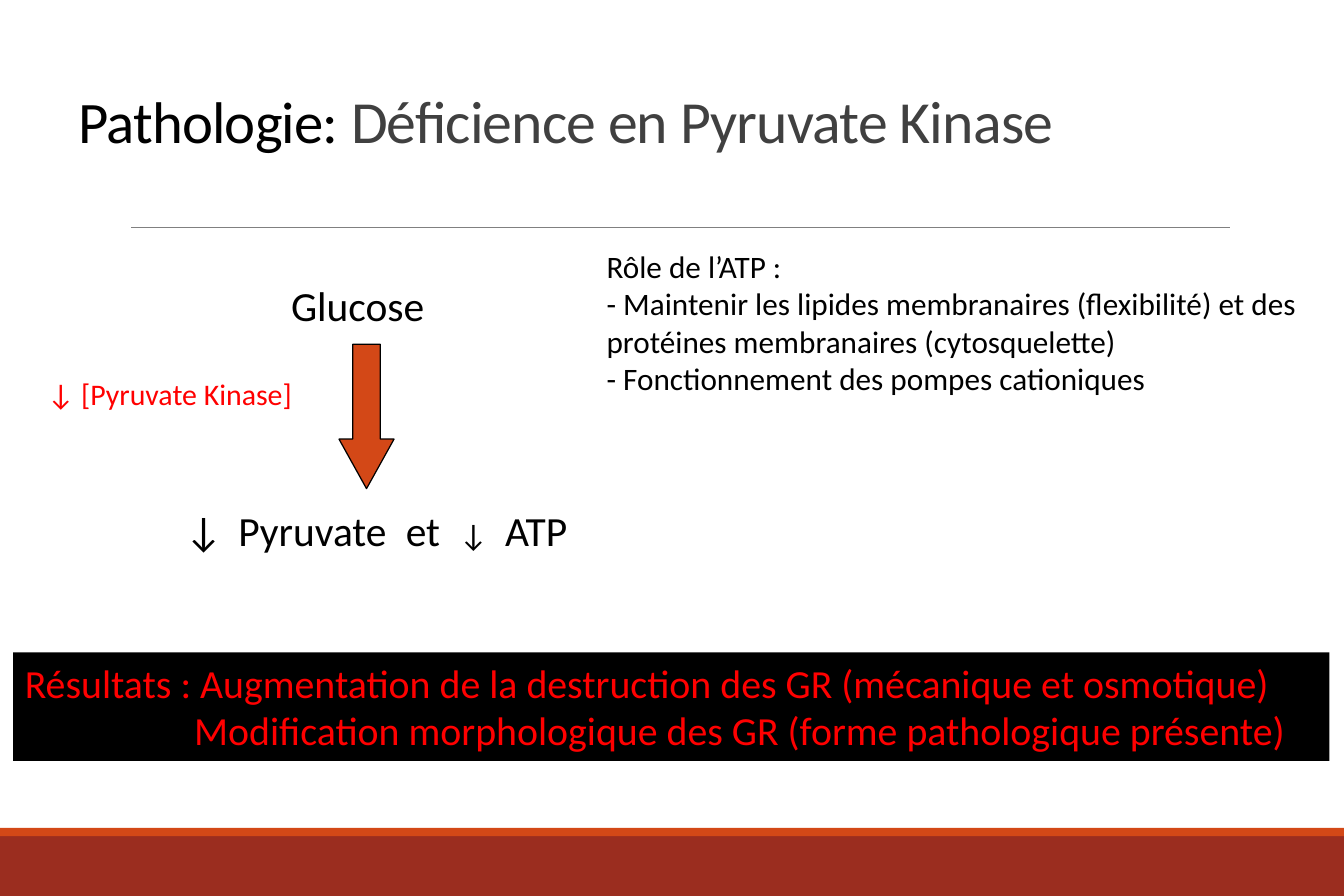
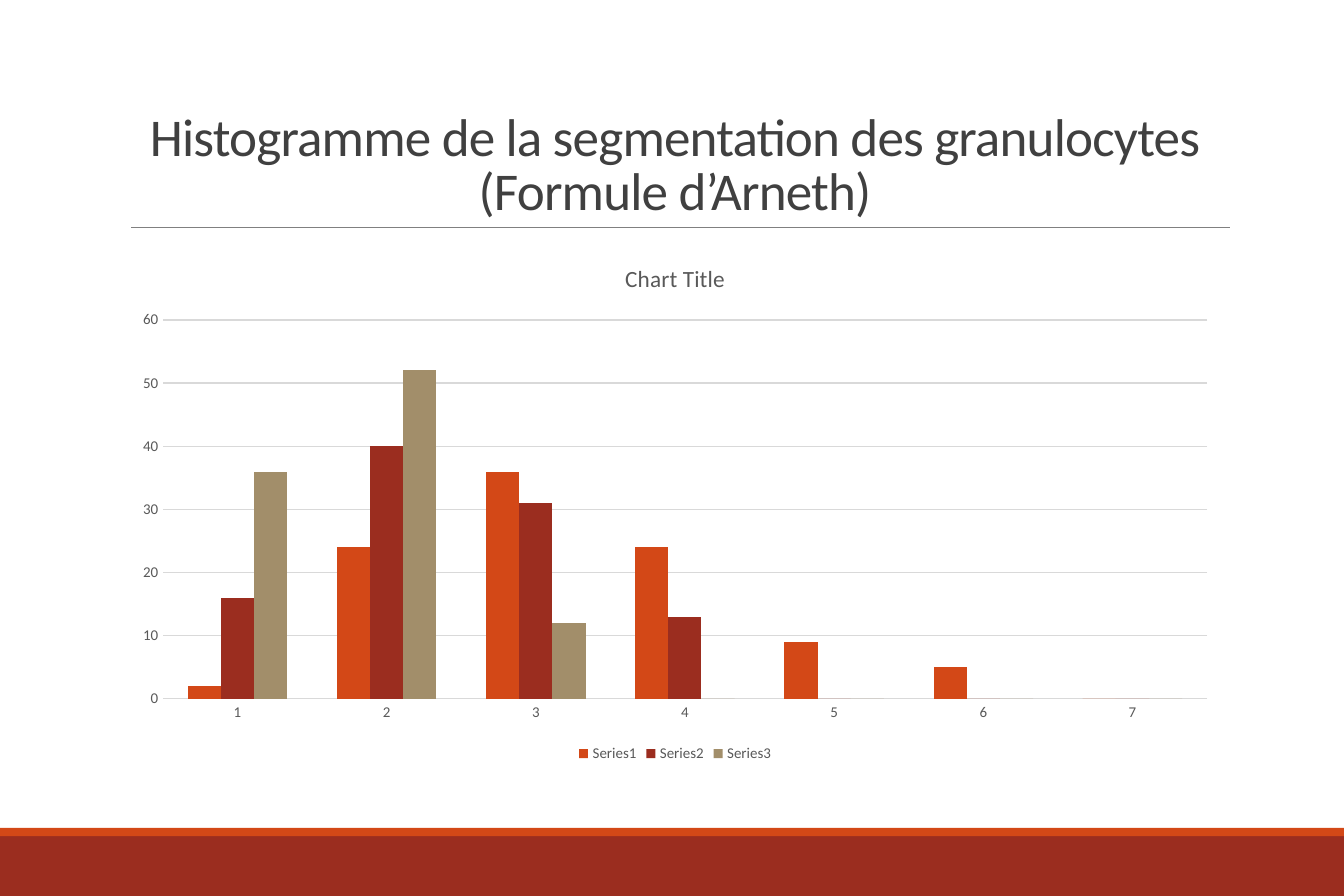
from dataclasses import dataclass
from typing import Any

import pptx
import pptx.chart.data
import pptx.dml.color
import pptx.enum.chart
import pptx.enum.shapes
import pptx.enum.text
import pptx.oxml.ns
import pptx.util
from lxml import etree

Cm = pptx.util.Cm
Pt = pptx.util.Pt
Shapes = pptx.enum.shapes.MSO_SHAPE
Align = pptx.enum.text.PP_ALIGN
Anchor = pptx.enum.text.MSO_ANCHOR

FONT = "Calibri"
ORANGE, BRICK, SAND = "D34817", "9B2D1F", "A28E6A"
BLACK, RED, GREY = "000000", "FF0000", "808080"
TITLE_COLOUR, CHART_COLOUR, GRID_COLOUR = "404040", "595959", "D9D9D9"
SLIDE_WIDTH, SLIDE_HEIGHT = 28.58, 19.05


@dataclass(frozen=True)
class Box:
    """Position and size in centimetres."""
    left: float
    top: float
    width: float
    height: float

    def lengths(self) -> tuple[Any, ...]:
        return tuple(Cm(value) for value in (self.left, self.top, self.width, self.height))


@dataclass(frozen=True)
class Run:
    text: str
    size: float
    colour: str = BLACK
    spacing: float = 0


@dataclass(frozen=True)
class Paragraph:
    runs: tuple[Run, ...]
    align: Any = Align.LEFT
    line_spacing: float = 1.0
    indent: float = 0
    tabs: tuple[float, ...] = ()


@dataclass(frozen=True)
class Label:
    box: Box
    paragraphs: tuple[Paragraph, ...]


@dataclass(frozen=True)
class Series:
    name: str
    values: tuple[int, ...]
    colour: str


BANDS = (
    (Box(0, 17.78, SLIDE_WIDTH, 1.27), BRICK),
    (Box(0, 17.6, SLIDE_WIDTH, 0.18), ORANGE),
)
PATHWAY_LABELS = (
    Label(Box(5.94, 5.84, 4, 1.35), (Paragraph((Run("Glucose", 25),)),)),
    Label(Box(0.76, 7.87, 6.45, 1.04), (Paragraph((Run("↓ [Pyruvate Kinase]", 18, RED),)),)),
    Label(Box(12.65, 5.13, 15.44, 4.27), tuple(
        Paragraph((Run(text, 18.8),)) for text in (
            "Rôle de l’ATP :",
            "- Maintenir les lipides membranaires (flexibilité) et des "
            "protéines membranaires (cytosquelette)",
            "- Fonctionnement des pompes cationiques",
        ))),
    Label(Box(3.68, 10.62, 8.64, 1.35), (Paragraph(
        (Run("↓\tPyruvate\tet\t", 25), Run("↓\t", 18.8), Run("ATP", 25)),
        tabs=(1.14, 4.7, 5.84, 6.81)),)),
)
RESULTS = (
    Paragraph((Run("Résultats : Augmentation de la destruction des GR "
                   "(mécanique et osmotique)", 24, RED),)),
    Paragraph((Run("Modification morphologique des GR (forme pathologique présente)",
                   24, RED),), indent=3.6),
)
CATEGORIES = tuple(str(number) for number in range(1, 8))
SERIES = (
    Series("Series1", (2, 24, 36, 24, 9, 5, 0), ORANGE),
    Series("Series2", (16, 40, 31, 13, 0, 0, 0), BRICK),
    Series("Series3", (36, 52, 12, 0, 0, 0, 0), SAND),
)


def colour_of(value: str) -> Any:
    return pptx.dml.color.RGBColor.from_string(value)


def apply_format(target: Any, values: dict[str, Any]) -> None:
    for name, value in values.items():
        setattr(target, name, value)


def fill_solid(fill: Any, colour: str) -> None:
    fill.solid()
    fill.fore_color.rgb = colour_of(colour)


def format_font(font: Any, size: float, colour: str) -> None:
    apply_format(font, {"name": FONT, "size": Pt(size), "bold": False})
    font.color.rgb = colour_of(colour)


def add_run(paragraph: Any, run: Run) -> None:
    """Add the run, turning each newline into a line break."""
    for index, text in enumerate(run.text.split("\n")):
        if index:
            paragraph.add_line_break()
        part = paragraph.add_run()
        part.text = text
        format_font(part.font, run.size, run.colour)
        if run.spacing:
            part.font._element.set("spc", str(round(run.spacing * 100)))


def write_text(shape: Any, paragraphs: tuple[Paragraph, ...], anchor: Any = Anchor.TOP) -> None:
    frame = shape.text_frame
    apply_format(frame, {"word_wrap": True, "vertical_anchor": anchor})
    for index, content in enumerate(paragraphs):
        paragraph = frame.add_paragraph() if index else frame.paragraphs[0]
        apply_format(paragraph, {"alignment": content.align, "line_spacing": content.line_spacing})
        properties = paragraph._p.get_or_add_pPr()
        if content.indent:
            properties.set("marL", str(Cm(content.indent)))
        if content.tabs:
            tab_list = etree.SubElement(properties, pptx.oxml.ns.qn("a:tabLst"))
            for position in content.tabs:
                etree.SubElement(tab_list, pptx.oxml.ns.qn("a:tab"),
                                 pos=str(Cm(position)), algn="l")
        for run in content.runs:
            add_run(paragraph, run)


def add_text(slide: Any, label: Label, anchor: Any = Anchor.TOP) -> None:
    write_text(slide.shapes.add_textbox(*label.box.lengths()), label.paragraphs, anchor)


def add_filled_shape(slide: Any, kind: Any, box: Box, colour: str) -> Any:
    shape = slide.shapes.add_shape(kind, *box.lengths())
    shape.shadow.inherit = False
    fill_solid(shape.fill, colour)
    shape.line.fill.background()
    return shape


def add_framed_slide(presentation: Any, title_box: Box, runs: tuple[Run, ...],
                     align: Any = Align.LEFT) -> Any:
    """Add a blank slide with the shared bands, rule and title style."""
    slide = presentation.slides.add_slide(presentation.slide_layouts[6])
    for box, colour in BANDS:
        add_filled_shape(slide, Shapes.RECTANGLE, box, colour)
    rule = slide.shapes.add_connector(
        pptx.enum.shapes.MSO_CONNECTOR.STRAIGHT, Cm(2.79), Cm(4.83), Cm(26.16), Cm(4.83))
    rule.line.color.rgb = colour_of(GREY)
    rule.line.width = Pt(0.5)
    etree.SubElement(rule._element.spPr, pptx.oxml.ns.qn("a:effectLst"))
    add_text(slide, Label(title_box, (Paragraph(runs, align, 0.85),)), Anchor.BOTTOM)
    return slide


def build_deficiency_slide(presentation: Any) -> None:
    slide = add_framed_slide(presentation, Box(1.42, 1.75, 25.7, 1.68), (
        Run("Pathologie: ", 35.4, BLACK, -0.5),
        Run("Déficience en Pyruvate Kinase", 36, TITLE_COLOUR, -0.5),
    ))
    for label in PATHWAY_LABELS:
        add_text(slide, label)
    arrow = add_filled_shape(slide, Shapes.DOWN_ARROW, Box(7.21, 7.32, 1.17, 3.07), ORANGE)
    arrow.adjustments[1] = 0.9
    arrow.line.color.rgb = colour_of(BLACK)
    arrow.line.width = Pt(0.75)
    results = add_filled_shape(slide, Shapes.RECTANGLE, Box(0.28, 13.87, 27.99, 2.31), BLACK)
    write_text(results, RESULTS)


def add_histogram(slide: Any, box: Box) -> None:
    data = pptx.chart.data.CategoryChartData()
    data.categories = CATEGORIES
    for series in SERIES:
        data.add_series(series.name, series.values)
    chart = slide.shapes.add_chart(
        pptx.enum.chart.XL_CHART_TYPE.COLUMN_CLUSTERED, *box.lengths(), data).chart
    format_font(chart.font, 10, BLACK)

    chart.has_title = True
    title = chart.chart_title.text_frame.paragraphs[0]
    add_run(title, Run("Chart Title", 14, CHART_COLOUR))

    chart.has_legend = True
    apply_format(chart.legend, {
        "position": pptx.enum.chart.XL_LEGEND_POSITION.BOTTOM, "include_in_layout": False})
    format_font(chart.legend.font, 9, CHART_COLOUR)

    plot = chart.plots[0]
    apply_format(plot, {"gap_width": 150, "overlap": 0, "vary_by_categories": False})
    for drawn, series in zip(plot.series, SERIES):
        fill_solid(drawn.format.fill, series.colour)

    no_tick = pptx.enum.chart.XL_TICK_MARK.NONE
    for axis in (chart.category_axis, chart.value_axis):
        apply_format(axis, {"major_tick_mark": no_tick, "minor_tick_mark": no_tick})
        format_font(axis.tick_labels.font, 9, CHART_COLOUR)
        axis.format.line.fill.background()
    apply_format(chart.value_axis, {
        "minimum_scale": 0, "maximum_scale": 60, "major_unit": 10, "has_major_gridlines": True})
    grid = chart.value_axis.major_gridlines.format.line
    grid.color.rgb = colour_of(GRID_COLOUR)
    grid.width = Pt(0.75)


def build_histogram_slide(presentation: Any) -> None:
    title = Run("Histogramme de la segmentation des granulocytes\n(Formule d’Arneth)",
                32, TITLE_COLOUR, -0.5)
    slide = add_framed_slide(presentation, Box(2.57, 0.79, 23.57, 4.04), (title,), Align.CENTER)
    add_histogram(slide, Box(2.57, 5.13, 23.57, 11.18))


def main() -> None:
    presentation = pptx.Presentation()
    apply_format(presentation, {
        "slide_width": Cm(SLIDE_WIDTH), "slide_height": Cm(SLIDE_HEIGHT)})
    build_deficiency_slide(presentation)
    build_histogram_slide(presentation)
    presentation.save("out.pptx")


if __name__ == "__main__":
    main()
